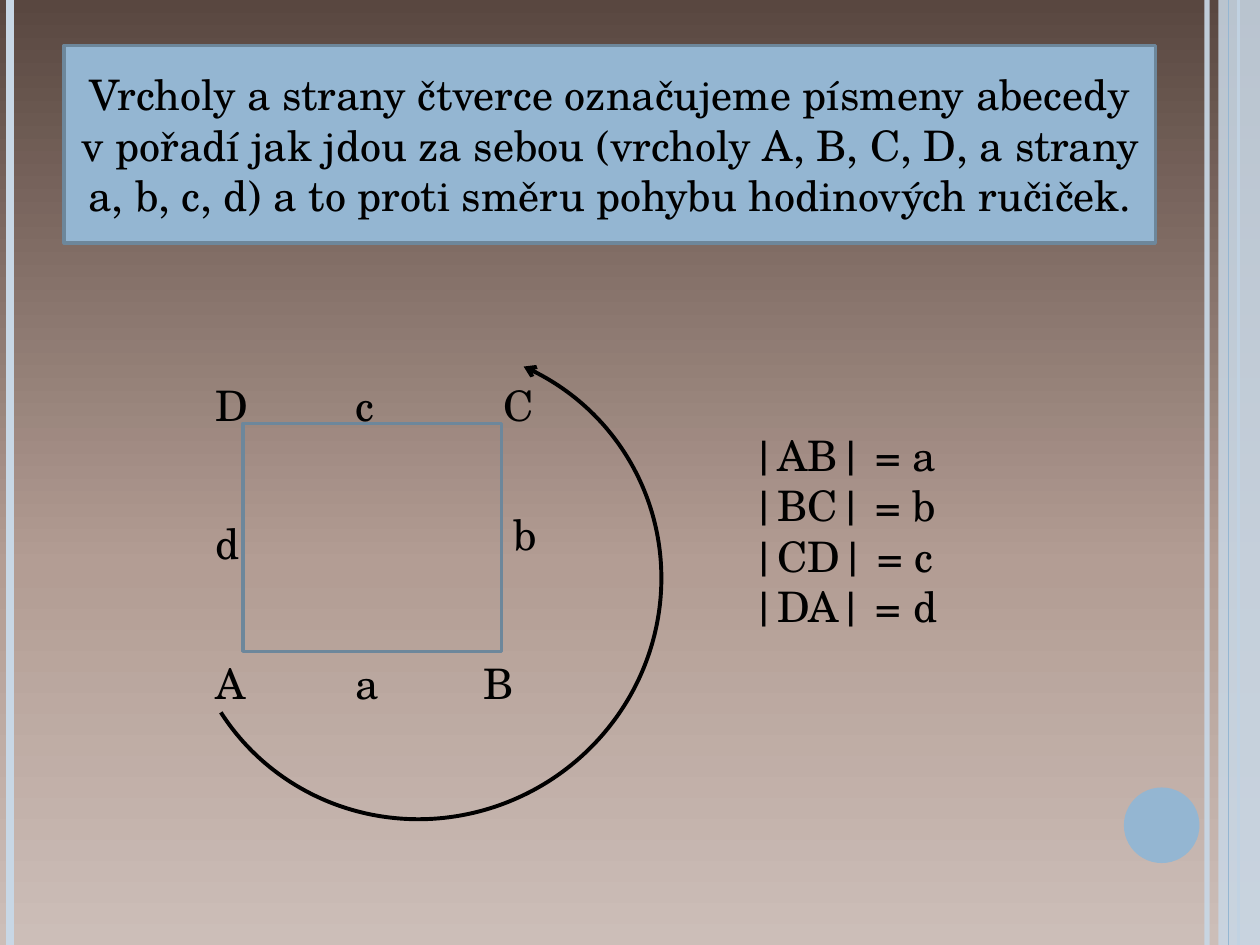
from copy import deepcopy
from dataclasses import dataclass

from pptx import Presentation
from pptx import util as u
from pptx.dml.color import RGBColor
from pptx.enum import shapes, text
from pptx.oxml.ns import qn
from lxml import etree


@dataclass(frozen=True)
class Theme:
    font: str = "TeX Gyre Schola"
    size: float = 24
    ink: str = "000000"
    accent: str = "94B6D2"
    pale: str = "C8D7E5"
    edge: str = "6D879B"
    backdrop: tuple = ((0, "CCBEB8"), (0.4, "B39D94"), (1, "594740"))


def write(tf, content, *, theme, align=text.PP_ALIGN.LEFT, anchor=text.MSO_ANCHOR.TOP,
          fit=text.MSO_AUTO_SIZE.NONE):
    tf.word_wrap, tf.auto_size, tf.vertical_anchor = True, fit, anchor
    for i, line in enumerate(content.split("\n")):
        p = tf.add_paragraph() if i else tf.paragraphs[0]
        p.alignment = align
        r = p.add_run()
        r.text = line
        r.font.name, r.font.size = theme.font, u.Pt(theme.size)
        r.font.color.rgb = RGBColor.from_string(theme.ink)


class Deck:
    """Builds styled elements on the current slide."""

    def __init__(self, theme):
        self.theme = theme
        self.prs = Presentation()
        self.prs.slide_width, self.prs.slide_height = u.Inches(10), u.Inches(7.5)
        self.s = None

    def add_slide(self):
        self.s = self.prs.slides.add_slide(self.prs.slide_layouts[5])
        fill = self.s.background.fill
        fill.gradient()
        fill.gradient_angle = 90
        stops = self.s.element.find(".//" + qn("a:gsLst"))
        stops.append(deepcopy(stops[-1]))
        for stop, (position, color) in zip(fill.gradient_stops, self.theme.backdrop):
            stop.position = position
            stop.color.rgb = RGBColor.from_string(color)

    def paint(self, sp, fill=None, line=None, width=2, alpha=100):
        if fill:
            sp.fill.solid()
            sp.fill.fore_color.rgb = RGBColor.from_string(fill)
            self.fade(sp, alpha)
        else:
            sp.fill.background()
        if line:
            sp.line.color.rgb = RGBColor.from_string(line)
            sp.line.width = u.Pt(width)
        else:
            sp.line.fill.background()

    def fade(self, sp, alpha):
        if alpha < 100:
            color = sp.element.spPr.find(".//" + qn("a:srgbClr"))
            etree.SubElement(color, qn("a:alpha"), val=str(alpha * 1000))

    def shape(self, kind, box, **look):
        sp = self.s.shapes.add_shape(kind, *map(u.Inches, box))
        sp.shadow.inherit = False
        self.paint(sp, **look)
        return sp

    def stripe(self, x, color, width, alpha=100):
        sp = self.s.shapes.add_connector(
            shapes.MSO_CONNECTOR.STRAIGHT, u.Inches(x), 0, u.Inches(x), self.prs.slide_height)
        sp.line.color.rgb = RGBColor.from_string(color)
        sp.line.width = u.Pt(width)
        self.fade(sp, alpha)
        etree.SubElement(sp.element.spPr, qn("a:effectLst"))

    def title(self, content, box):
        sp = self.s.shapes.title
        sp.left, sp.top, sp.width, sp.height = map(u.Inches, box)
        self.paint(sp, fill=self.theme.accent, line=self.theme.edge)
        write(sp.text_frame, content, theme=self.theme,
              align=text.PP_ALIGN.CENTER, anchor=text.MSO_ANCHOR.MIDDLE)

    def label(self, content, box):
        sp = self.s.shapes.add_textbox(*map(u.Inches, box))
        write(sp.text_frame, content, theme=self.theme,
              fit=text.MSO_AUTO_SIZE.SHAPE_TO_FIT_TEXT)

    def arc_arrow(self, box, start, rotation):
        sp = self.shape(shapes.MSO_SHAPE.ARC, box, line=self.theme.ink, width=2.25)
        sp.adjustments[0], sp.adjustments[1] = start, 0
        sp.rotation = rotation
        etree.SubElement(sp.element.spPr.find(qn("a:ln")), qn("a:headEnd"), type="arrow")


def main():
    theme = Theme()
    deck = Deck(theme)
    deck.add_slide()

    deck.stripe(9.58, theme.pale, 3, alpha=93)
    deck.stripe(0.08, theme.pale, 4.5)
    deck.stripe(9.83, theme.accent, 1.5)
    deck.shape(shapes.MSO_SHAPE.RECTANGLE, (9.67, 0, 0.33, 7.5), fill=theme.pale, alpha=87)
    deck.stripe(9.75, theme.accent, 0.75)
    deck.shape(shapes.MSO_SHAPE.OVAL, (8.92, 6.25, 0.6, 0.6), fill=theme.accent)

    deck.title("Vrcholy a strany čtverce označujeme písmeny abecedy v pořadí jak jdou za sebou "
               "(vrcholy A, B, C, D, a strany a, b, c, d) a to proti směru pohybu "
               "hodinových ručiček.", (0.51, 0.36, 8.66, 1.57))

    deck.shape(shapes.MSO_SHAPE.RECTANGLE, (1.93, 3.36, 2.05, 1.81), line=theme.edge)
    left, middle, above, below = 1.61, 2.72, 2.96, 5.17
    for name, x, y, width in (
        ("b", 3.98, 3.99, 0.39), ("C", 3.9, above, 0.39),
        ("c", middle, above, 0.63), ("D", left, above, 0.47),
        ("d", left, 4.06, 0.31), ("a", middle, below, 0.71),
        ("A", left, below, 0.55), ("B", 3.74, below, 0.55),
    ):
        deck.label(name, (x, y, width, 0.5))
    deck.arc_arrow((1.45, 2.76, 3.81, 3.73), start=88.62, rotation=147.3)

    sides = zip(("AB", "BC", "CD", "DA"), "abcd")
    deck.label("\n".join(f"|{ends}| = {side}" for ends, side in sides), (5.87, 3.36, 3.07, 1.72))
    deck.prs.save("out.pptx")


if __name__ == "__main__":
    main()
